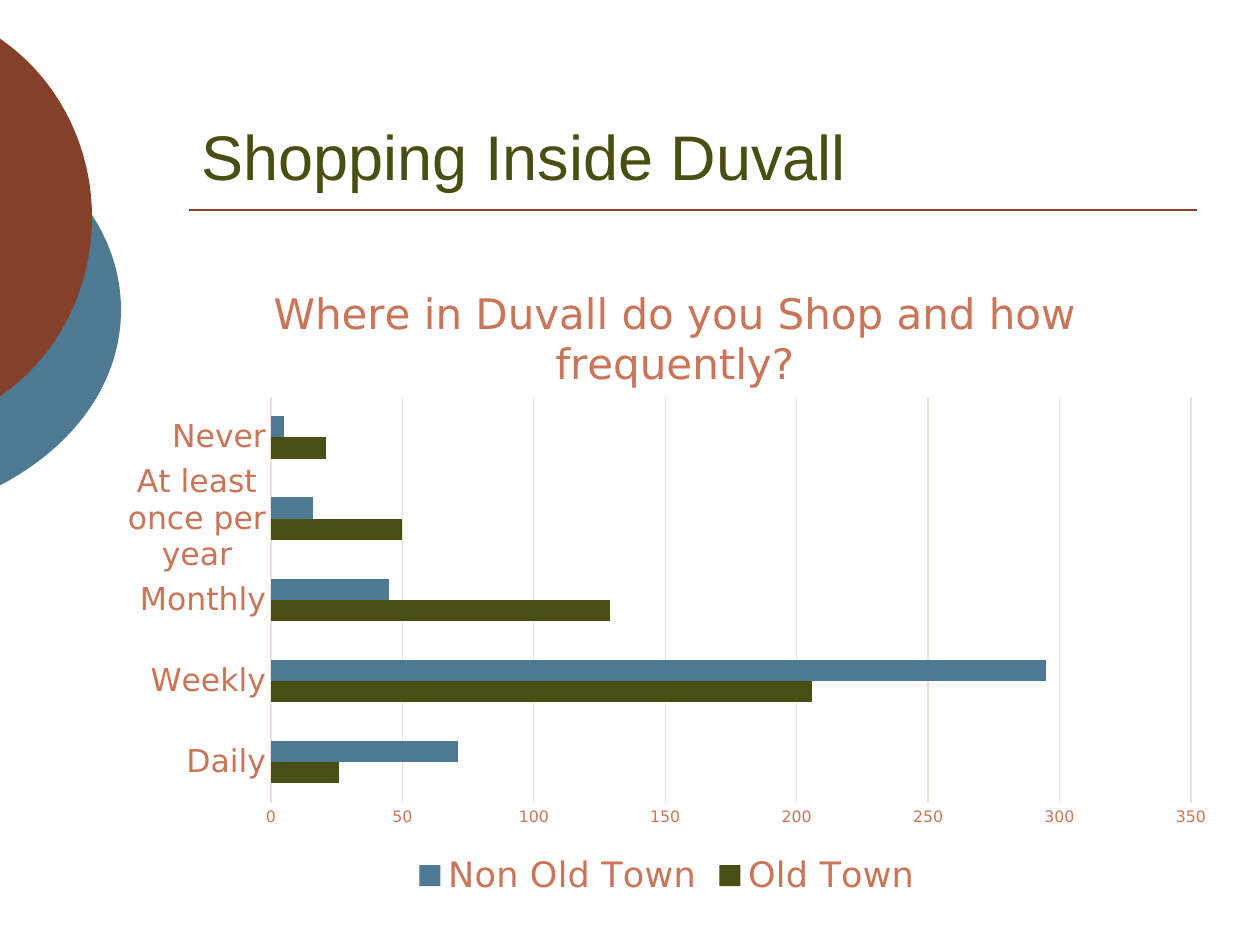
import pptx
import pptx.chart.data
import pptx.dml.color
import pptx.enum.chart
import pptx.enum.shapes
import pptx.enum.text
import pptx.oxml
import pptx.oxml.ns
import pptx.util

RGB = pptx.dml.color.RGBColor
OLIVE = RGB(0x49, 0x4F, 0x13)
BLUE = RGB(0x4D, 0x79, 0x92)
BROWN = RGB(0x84, 0x40, 0x29)
CORAL = RGB(0xCB, 0x75, 0x58)
PALE = RGB(0xF3, 0xDF, 0xD8)
PX = 914400 // 126

# Content
TITLE = "Shopping Inside Duvall"
CHART_TITLE = "Where in Duvall do you Shop and how frequently?"
CATEGORIES = ["Daily", "Weekly", "Monthly", "At least once per year", "Never"]
SERIES = [
    ("Old Town", OLIVE, (26, 206, 129, 50, 21)),
    ("Non Old Town", BLUE, (71, 295, 45, 16, 5)),
]

# Geometry in px: left, top, width, height
TITLE_BOX = (189, 42, 1008, 157)
CHART_BOX = (105, 252, 1124, 651)
PLOT_BOX = (271, 397, 920, 406)
CHART_TITLE_AT = (266, 278)
RULE = (189, 210, 1197, 210)
# Arcs: colour, frame, start point, and two Bezier curves meeting at the right
ARCS = [
    (BLUE, (-446, 94, 567, 431), (-1, 134),
     [((76, 174), (121, 239), (121, 310)), ((121, 381), (76, 446), (-1, 486))]),
    (BROWN, (-334, 0, 426, 435), (-1, 38),
     [((58, 78), (92, 146), (92, 217)), ((92, 289), (58, 357), (-1, 397))]),
]
NS_A = pptx.oxml.ns.nsdecls("a")
NS_C = pptx.oxml.ns.nsdecls("c")


def scaled(values):
    return [v * PX for v in values]


def style_font(font, size, color, name="DejaVu Sans"):
    font.name, font.size, font.bold = name, pptx.util.Pt(size), False
    font.color.rgb = color


def style_line(line, color, width):
    line.color.rgb = color
    line.width = pptx.util.Pt(width)


def add_arc(s, color, frame, start, curves):
    builder = s.shapes.build_freeform(*start, scale=PX)
    builder.add_line_segments([c[-1] for c in curves], close=True)
    sp = builder.convert_to_shape()
    sp.left, sp.top, sp.width, sp.height = scaled(frame)
    sp.shadow.inherit = False
    sp.fill.solid()
    sp.fill.fore_color.rgb = color
    sp.line.fill.background()

    # Curved outline in the frame's own coordinates
    def pt(point):
        return '<a:pt x="%d" y="%d"/>' % (point[0] - frame[0], point[1] - frame[1])

    beziers = "".join("<a:cubicBezTo>%s</a:cubicBezTo>" % "".join(map(pt, c))
                      for c in curves)
    outline = pptx.oxml.parse_xml(
        '<a:path %s w="%d" h="%d"><a:moveTo>%s</a:moveTo>%s<a:close/></a:path>'
        % (NS_A, frame[2], frame[3], pt(start), beziers))
    outlines = sp._element.spPr.find(".//" + pptx.oxml.ns.qn("a:pathLst"))
    outlines.replace(outlines[0], outline)


def fixed_layout(settings):
    return pptx.oxml.parse_xml(
        "<c:layout %s><c:manualLayout>%s</c:manualLayout></c:layout>" % (
            NS_C, "".join('<c:%s val="%s"/>' % pair for pair in settings)))


def set_layout(element, index, settings):
    for old in element.findall(pptx.oxml.ns.qn("c:layout")):
        element.remove(old)
    element.insert(index, fixed_layout(settings))


prs = pptx.Presentation()
prs.slide_width, prs.slide_height = scaled((1260, 945))
s = prs.slides.add_slide(prs.slide_layouts[5])

# Arcs at the left edge
for arc in ARCS:
    add_arc(s, *arc)

# Title and the rule under it
title = s.shapes.title
title.left, title.top, title.width, title.height = scaled(TITLE_BOX)
tf = title.text_frame
tf.text = TITLE
tf.vertical_anchor = pptx.enum.text.MSO_ANCHOR.BOTTOM
p = tf.paragraphs[0]
p.alignment = pptx.enum.text.PP_ALIGN.LEFT
style_font(p.runs[0].font, 36, OLIVE, "Arial")

rule = s.shapes.add_connector(pptx.enum.shapes.MSO_CONNECTOR.STRAIGHT, *scaled(RULE))
style_line(rule.line, BROWN, 1)
rule._element.spPr.append(pptx.oxml.parse_xml("<a:effectLst %s/>" % NS_A))

# Chart
data = pptx.chart.data.CategoryChartData(number_format="0")
data.categories = CATEGORIES
for name, _, values in SERIES:
    data.add_series(name, values)
chart = s.shapes.add_chart(pptx.enum.chart.XL_CHART_TYPE.BAR_CLUSTERED,
                           *scaled(CHART_BOX), data).chart
style_font(chart.font, 10, BROWN)
chart.has_title = True
tf = chart.chart_title.text_frame
tf.text = CHART_TITLE
style_font(tf.paragraphs[0].runs[0].font, 24, CORAL)
chart.chart_title.include_in_layout = False

plot = chart.plots[0]
plot.gap_width, plot.overlap, plot.vary_by_categories = 182, 0, False
for series, (_, color, _) in zip(plot.series, SERIES):
    series.format.fill.solid()
    series.format.fill.fore_color.rgb = color

# Axes and legend
for axis, size in ((chart.category_axis, 18), (chart.value_axis, 9)):
    axis.major_tick_mark = axis.minor_tick_mark = pptx.enum.chart.XL_TICK_MARK.NONE
    style_font(axis.tick_labels.font, size, CORAL)
style_line(chart.category_axis.format.line, PALE, 0.75)
value_axis = chart.value_axis
value_axis.format.line.fill.background()
value_axis.has_major_gridlines = True
style_line(value_axis.major_gridlines.format.line, PALE, 0.75)

chart.has_legend = True
chart.legend.position = pptx.enum.chart.XL_LEGEND_POSITION.BOTTOM
chart.legend.include_in_layout = False
style_font(chart.legend.font, 20, CORAL)

# Fixed places of plot area and chart title, as fractions of the chart
left, top, width, height = CHART_BOX
edges = [("xMode", "edge"), ("yMode", "edge")]


def place(x, y):
    return [("x", "%.4f" % ((x - left) / width)), ("y", "%.4f" % ((y - top) / height))]


size = [("w", "%.4f" % (PLOT_BOX[2] / width)), ("h", "%.4f" % (PLOT_BOX[3] / height))]
set_layout(chart._chartSpace.chart.plotArea, 0,
           [("layoutTarget", "inner")] + edges + place(*PLOT_BOX[:2]) + size)
set_layout(chart.chart_title._element, 1, edges + place(*CHART_TITLE_AT))

prs.save("out.pptx")
